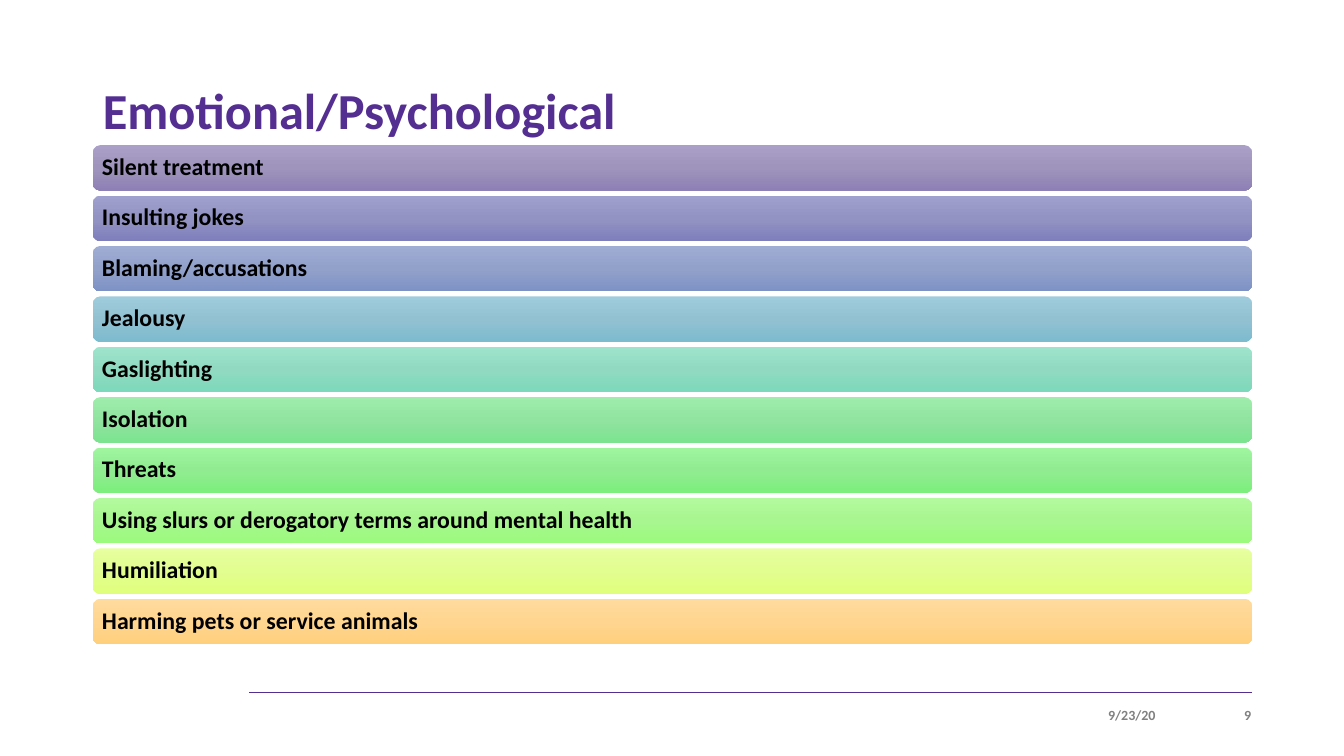
import copy

import pptx
import pptx.dml.color
import pptx.enum.shapes
import pptx.enum.text
import pptx.oxml
import pptx.oxml.ns
import pptx.util
from pptx.dml.color import RGBColor
from pptx.util import Inches

PURPLE = RGBColor(0x54, 0x2E, 0x91)
GRAY = RGBColor(0x80, 0x80, 0x80)
BLACK = RGBColor(0x00, 0x00, 0x00)
MIDDLE = pptx.enum.text.MSO_ANCHOR.MIDDLE
ALIGN = pptx.enum.text.PP_ALIGN

# Each behavior with the top, middle and bottom color of its bar
BEHAVIORS = [
    ("Silent treatment", "AAA0C7", "9E94BC", "8E80B5"),
    ("Insulting jokes", "A0A0CE", "9393C3", "7F7FBD"),
    ("Blaming/accusations", "9FADD5", "92A1CA", "7E92C6"),
    ("Jealousy", "9FCCDC", "92C1D2", "7DBBCF"),
    ("Gaslighting", "9EE4CC", "91DAC1", "7DD9BB"),
    ("Isolation", "9EEDAC", "91E3A0", "7CE490"),
    ("Threats", "9EF59E", "91EC91", "7CEF7C"),
    ("Using slurs or derogatory terms around mental health",
     "B3FA9E", "A8F690", "9AFB7C"),
    ("Humiliation", "E7FF9E", "E2FD90", "E0FF7C"),
    ("Harming pets or service animals", "FFDB9E", "FFD590", "FFD07C"),
]
LEFT, WIDTH = 0.92, 11.5
FIRST_TOP, PITCH, BAR_HEIGHT = 1.44, 0.5, 0.45


def write(frame, text, size, color, align, side_inset, end_inset):
    frame.word_wrap = True
    frame.vertical_anchor = MIDDLE
    frame.margin_left = frame.margin_right = Inches(side_inset)
    frame.margin_top = frame.margin_bottom = Inches(end_inset)
    frame.text = text
    paragraph = frame.paragraphs[0]
    paragraph.alignment = align
    paragraph.font.name = "Calibri"
    paragraph.font.size = pptx.util.Pt(size)
    paragraph.font.bold = True
    paragraph.font.color.rgb = color
    return paragraph


def fill_gradient(fill, colors):
    """Fill from top to bottom with three evenly spaced colors."""
    fill.gradient()
    fill.gradient_angle = 270
    stop_list = fill.gradient_stops
    first_stop = bar._element.spPr.find(".//" + pptx.oxml.ns.qn("a:gs"))
    first_stop.addnext(copy.deepcopy(first_stop))
    for stop, position, color in zip(stop_list, (0, 0.5, 1), colors):
        stop.position = position
        stop.color.rgb = RGBColor.from_string(color)


presentation = pptx.Presentation()
presentation.slide_width = Inches(13.33)
presentation.slide_height = Inches(7.5)
slide = presentation.slides.add_slide(presentation.slide_layouts[5])

footer_rule = slide.shapes.add_connector(
    pptx.enum.shapes.MSO_CONNECTOR.STRAIGHT,
    Inches(2.47), Inches(6.87), Inches(12.42), Inches(6.87))
footer_rule.line.color.rgb = PURPLE
footer_rule.line.width = pptx.util.Pt(0.5)
footer_rule._element.spPr.append(pptx.oxml.parse_xml(
    f'<a:effectLst {pptx.oxml.ns.nsdecls("a")}/>'))

title = slide.shapes.title
title.left, title.top = Inches(LEFT), Inches(0.4)
title.width, title.height = Inches(WIDTH), Inches(1.45)
heading = write(title.text_frame, "Emotional/Psychological", 36, PURPLE,
                ALIGN.LEFT, 0.1, 0.05)
heading.line_spacing = 0.9

for text, left, width in (("9/23/20", 8.46, 3), ("9", 11.62, 0.79)):
    footer = slide.shapes.add_textbox(
        Inches(left), Inches(6.95), Inches(width), Inches(0.28))
    write(footer.text_frame, text, 10, GRAY, ALIGN.RIGHT, 0, 0.05)

for row, (behavior, *colors) in enumerate(BEHAVIORS):
    bar = slide.shapes.add_shape(
        pptx.enum.shapes.MSO_SHAPE.ROUNDED_RECTANGLE,
        Inches(LEFT), Inches(FIRST_TOP + row * PITCH),
        Inches(WIDTH), Inches(BAR_HEIGHT))
    bar.shadow.inherit = False
    bar.line.fill.background()
    fill_gradient(bar.fill, colors)
    label = write(bar.text_frame, behavior, 17, BLACK, ALIGN.LEFT, 0.07, 0.05)
    label.line_spacing = 0.9

presentation.save("out.pptx")
